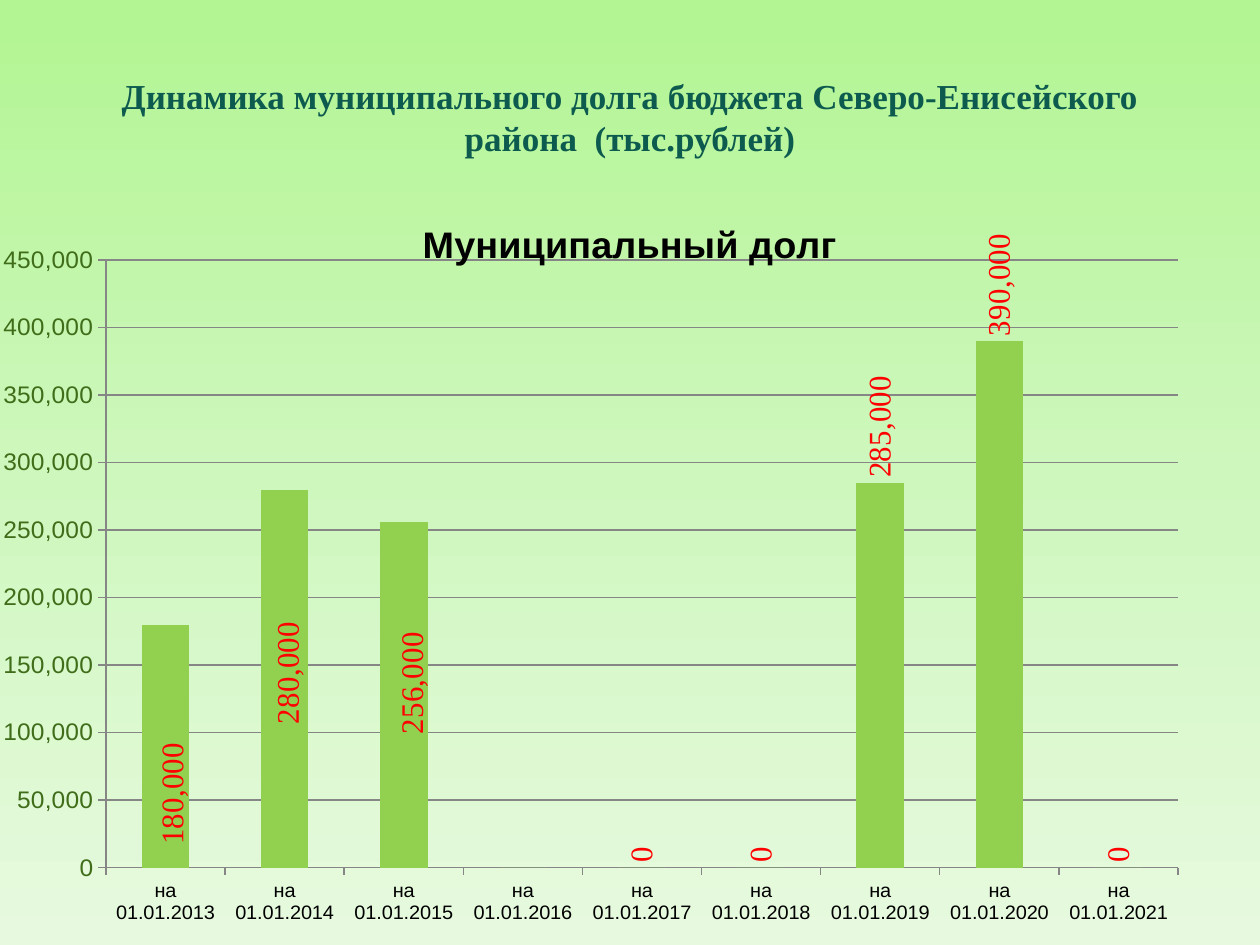
from copy import deepcopy
from dataclasses import dataclass
from lxml.etree import SubElement
from pptx import Presentation
from pptx.chart.data import CategoryChartData
from pptx.dml.color import RGBColor
from pptx.enum.chart import XL_CHART_TYPE as ChartType, XL_LABEL_POSITION as LabelPosition, XL_TICK_MARK as TickMark
from pptx.enum.text import MSO_ANCHOR as Anchor, PP_ALIGN as Align
from pptx.oxml.ns import qn
from pptx.util import Inches, Pt


@dataclass(frozen=True)
class Theme:
    heading: str = "0D5A4F"
    text: str = "000000"
    scale: str = "3F6D19"
    line: str = "868686"
    bar: str = "92D050"
    label: str = "FF0000"
    background: tuple = ((0, "B2F592"), (0.5, "CEF7BD"), (1, "E7FADF"))
    serif: str = "Times New Roman"
    sans: str = "Arial"
    heading_size: float = 20
    chart_title_size: float = 21.6
    label_size: float = 18
    value_size: float = 14
    category_size: float = 11.4


def set_font(font, name, size, color, bold=False):
    font.name = name
    font.size = Pt(size)
    font.color.rgb = RGBColor.from_string(color)
    font.bold = bold


def add_layout(element, index, modes, **percents):
    for old in element.findall(qn("c:layout")):
        element.remove(old)
    layout = SubElement(element, qn("c:layout"))
    element.insert(index, layout)
    manual = SubElement(layout, qn("c:manualLayout"))
    settings = modes | {name: round(value / 100, 4) for name, value in percents.items()}
    for name, value in settings.items():
        SubElement(manual, qn(f"c:{name}")).set("val", str(value))


theme = Theme()
deck = Presentation()
deck.slide_width = Inches(10)
deck.slide_height = Inches(7.5)
page = deck.slides.add_slide(deck.slide_layouts[5])

fill = page.background.fill
fill.gradient()
fill.gradient_angle = 270
stop_list = page.element.find(".//" + qn("a:gsLst"))
stop_list.append(deepcopy(stop_list[-1]))
for stop, (position, color) in zip(fill.gradient_stops, theme.background):
    stop.position = position
    stop.color.rgb = RGBColor.from_string(color)

title = page.shapes.title
title.left, title.top = Inches(0.5), Inches(0.3)
title.width, title.height = Inches(9), Inches(1.25)
title.text_frame.text = "Динамика муниципального долга бюджета Северо-Енисейского района  (тыс.рублей)"
title.text_frame.vertical_anchor = Anchor.MIDDLE
para = title.text_frame.paragraphs[0]
para.alignment = Align.CENTER
set_font(para.font, theme.serif, theme.heading_size, theme.heading, True)

data = CategoryChartData(number_format="#,##0")
data.categories = [f"на 01.01.{year}" for year in range(2013, 2022)]
data.add_series("Муниципальный долг", (180000, 280000, 256000, 0, 0, 0, 285000, 390000, 0))
chart = page.shapes.add_chart(
    ChartType.COLUMN_CLUSTERED, Inches(0), Inches(1.53), Inches(10), Inches(5.8), data
).chart
set_font(chart.font, theme.sans, theme.label_size, theme.text)
chart.has_legend = False
chart.has_title = True
chart.chart_title.text_frame.text = "Муниципальный долг"
set_font(chart.chart_title.text_frame.paragraphs[0].font, theme.sans, theme.chart_title_size, theme.text, True)
edges = {"xMode": "edge", "yMode": "edge"}
add_layout(chart.chart_title._element, 1, edges, x=33, y=2.9)
plot_area = chart._chartSpace.find(".//" + qn("c:plotArea"))
add_layout(plot_area, 0, {"layoutTarget": "inner"} | edges, x=8.4, y=9.4, w=85.1, h=85)

for axis, size, color in (
    (chart.category_axis, theme.category_size, theme.text),
    (chart.value_axis, theme.value_size, theme.scale),
):
    set_font(axis.tick_labels.font, theme.sans, size, color)
    axis.major_tick_mark = TickMark.OUTSIDE
    axis.minor_tick_mark = TickMark.NONE
    axis.format.line.color.rgb = RGBColor.from_string(theme.line)
value_axis = chart.value_axis
value_axis.minimum_scale, value_axis.maximum_scale, value_axis.major_unit = 0, 450000, 50000
value_axis.tick_labels.number_format = "#,##0"
value_axis.tick_labels.number_format_is_linked = False
value_axis.has_major_gridlines = True
value_axis.major_gridlines.format.line.color.rgb = RGBColor.from_string(theme.line)

plot = chart.plots[0]
plot.gap_width = 150
plot.vary_by_categories = False
series = plot.series[0]
series.format.fill.solid()
series.format.fill.fore_color.rgb = RGBColor.from_string(theme.bar)
labels = series.data_labels
labels.show_value = True
labels.number_format = "#,##0"
labels.number_format_is_linked = False
labels.position = LabelPosition.OUTSIDE_END
set_font(labels.font, theme.serif, theme.label_size, theme.label)

for index, (x, y) in enumerate(((0.6, 31.5), (0.3, 33.5), (0.7, 30.4))):
    label = series.points[index].data_label
    set_font(label.font, theme.serif, theme.label_size, theme.label)
    label.position = LabelPosition.OUTSIDE_END
    element = label._get_or_add_dLbl()
    add_layout(element, 1, {}, x=x, y=y)
    element.insert(2, deepcopy(labels._element.find(qn("c:numFmt"))))

hidden = series.points[3].data_label._get_or_add_dLbl()
for child in hidden[1:]:
    hidden.remove(child)
SubElement(hidden, qn("c:delete")).set("val", "1")

for body in labels._element.iter(qn("a:bodyPr")):
    body.set("rot", "-5400000")
    body.set("vert", "horz")

for leader in labels._element.findall(qn("c:showLeaderLines")):
    labels._element.remove(leader)
SubElement(labels._element, qn("c:showLeaderLines")).set("val", "0")
c15 = "http://schemas.microsoft.com/office/drawing/2012/chart"
extension = SubElement(SubElement(labels._element, qn("c:extLst")), qn("c:ext"), nsmap={"c15": c15})
extension.set("uri", "{CE6537A1-D6FC-4f65-9D91-7224C49458BB}")
SubElement(extension, f"{{{c15}}}showLeaderLines").set("val", "0")

deck.save("out.pptx")
